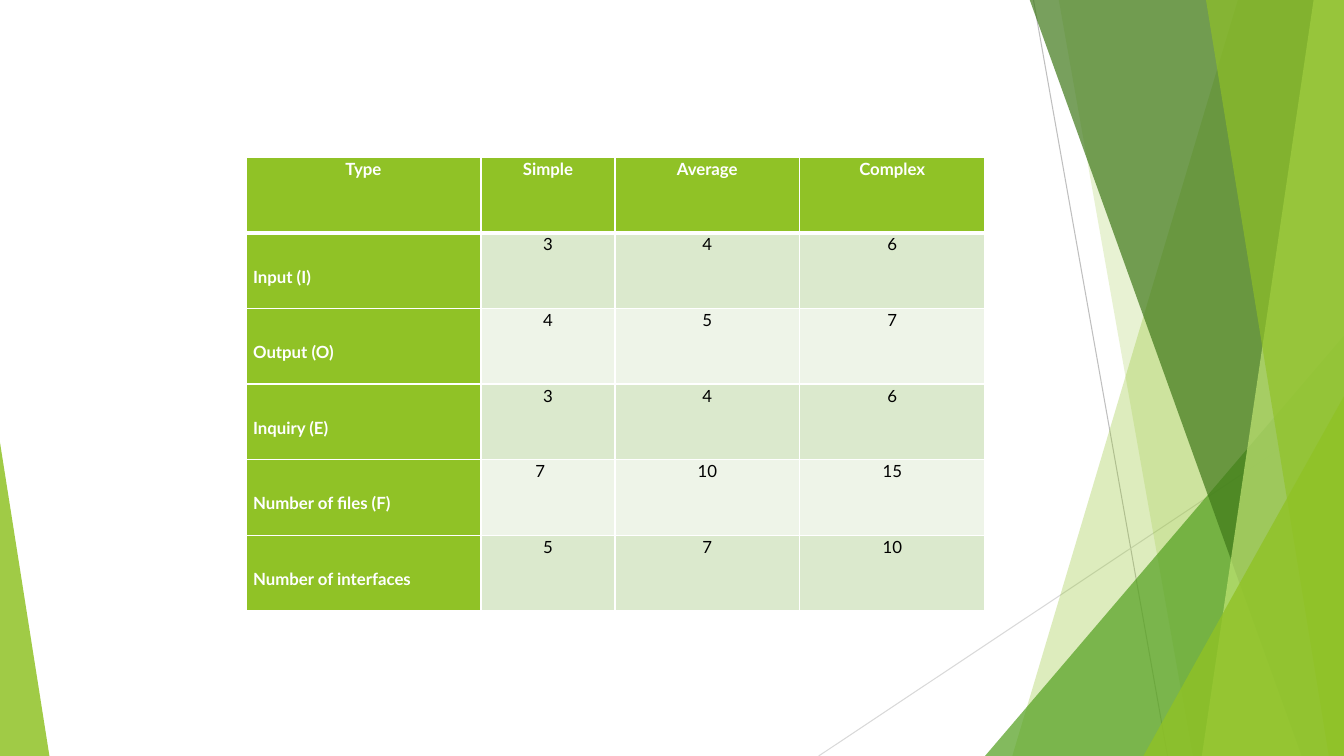
from lxml.etree import SubElement as Sub
from pptx import Presentation
from pptx.dml.color import RGBColor as Rgb
from pptx.enum.shapes import MSO_CONNECTOR as Conn, MSO_SHAPE as Kind
from pptx.enum.text import MSO_ANCHOR as Anchor, PP_ALIGN as Align
from pptx.oxml import parse_xml
from pptx.oxml.ns import nsdecls, qn
from pptx.util import Inches, Pt

WIDE, HIGH = 13.33, 7.5
COLORS = {
    "lime": "90C226", "leaf": "54A021", "forest": "3F7819", "pale": "C0E474",
    "band": "DBE9CD", "light": "EEF4E8", "white": "FFFFFF", "black": "000000",
    "gray": "BFBFBF", "mist": "D9D9D9",
}
FONT = {"name": "Lato", "size": Pt(12)}
PARA = {"line_spacing": 1.07, "space_after": Pt(8)}
CELL = {"margin_left": Inches(0.07), "margin_right": Inches(0.07),
        "margin_top": 0, "margin_bottom": 0, "vertical_anchor": Anchor.TOP}
WIDTHS = [2.33, 1.33, 1.83, 1.84]
ROW = 0.75
ROWS = [
    ["Type", "Simple", "Average", "Complex"],
    ["Input (I)", "3", "4", "6"],
    ["Output (O)", "4", "5", "7"],
    ["Inquiry (E)", "3", "4", "6"],
    ["Number of files (F)", "7", "10", "15"],
    ["Number of interfaces", "5", "7", "10"],
]


def apply(item, values):
    for key, value in values.items():
        setattr(item, key, value)


class Page:
    def __init__(self, slide):
        self.shapes = slide.shapes

    def color(self, name):
        return Rgb.from_string(COLORS[name])

    def line(self, start, end, name):
        line = self.shapes.add_connector(
            Conn.STRAIGHT, *[Inches(n) for n in (*start, *end)])
        line.line.width = Pt(0.75)
        line.line.color.rgb = self.color(name)
        Sub(line._element.spPr, qn("a:effectLst"))

    def paint(self, shape, name, alpha):
        shape.shadow.inherit = False
        shape.fill.solid()
        shape.fill.fore_color.rgb = self.color(name)
        shape.line.fill.background()
        tint = shape._element.spPr.find(qn("a:solidFill"))[0]
        Sub(tint, qn("a:alpha")).set("val", str(alpha * 1000))

    def blade(self, top, base, name, alpha):
        points = [(Inches(x), Inches(y)) for x, y in
                  [(top, -0.01), (WIDE, -0.01), (WIDE, HIGH), (base, HIGH)]]
        build = self.shapes.build_freeform(*points[0])
        build.add_line_segments(points[1:], close=True)
        self.paint(build.convert_to_shape(), name, alpha)

    def wedge(self, left, width, height, peak, name, alpha):
        shape = self.shapes.add_shape(
            Kind.ISOSCELES_TRIANGLE, Inches(left), Inches(HIGH - height),
            Inches(width), Inches(height))
        shape.adjustments[0] = peak
        self.paint(shape, name, alpha)

    def edges(self, cell, widths):
        props = cell._tc.get_or_add_tcPr()
        for spot, (side, width) in enumerate(widths.items()):
            props.insert(spot, parse_xml(
                f'<a:ln{side} {nsdecls("a")} w="{Pt(width)}"><a:solidFill>'
                f'<a:srgbClr val="{COLORS["white"]}"/></a:solidFill></a:ln{side}>'))

    def cell(self, cell, text, fill, ink, bold, align, space, edges):
        apply(cell, CELL | space)
        cell.fill.solid()
        cell.fill.fore_color.rgb = self.color(fill)
        self.edges(cell, edges)
        para = cell.text_frame.paragraphs[0]
        apply(para, PARA | {"alignment": align})
        run = para.add_run()
        run.text = text
        apply(run.font, FONT | {"bold": bold})
        run.font.color.rgb = self.color(ink)

    def table(self, left, top, rows):
        table = self.shapes.add_table(
            len(rows), len(WIDTHS), Inches(left), Inches(top),
            Inches(sum(WIDTHS)), Inches(ROW * len(rows))).table
        for col, width in zip(table.columns, WIDTHS):
            col.width = Inches(width)
        for r, row in enumerate(rows):
            table.rows[r].height = Inches(ROW)
            edges = {"L": 1, "R": 1, "T": 3 if r == 1 else 1, "B": 1 if r else 3}
            for c, text in enumerate(row):
                head = r == 0 or c == 0
                fill = "lime" if head else "band" if r % 2 else "light"
                align, space = Align.CENTER, {}
                if r and c == 0:
                    align, space = Align.JUSTIFY, {"margin_top": Inches(0.32)}
                elif (r, c) == (4, 1):
                    align, space = Align.LEFT, {"margin_left": Inches(0.54)}
                self.cell(table.cell(r, c), text, fill,
                          "white" if head else "black", head, align, space, edges)


def main():
    deck = Presentation()
    apply(deck, {"slide_width": Inches(WIDE), "slide_height": Inches(HIGH)})
    page = Page(deck.slides.add_slide(deck.slide_layouts[6]))
    page.line((10.25, 0), (11.58, HIGH), "gray")
    page.line((WIDE, 4.03), (8.12, HIGH), "mist")
    page.blade(12.28, 10.04, "lime", 30)
    page.blade(10.5, 11.83, "lime", 20)
    page.wedge(9.77, 3.56, 4.17, 1, "leaf", 72)
    page.blade(10.21, 12.91, "forest", 70)
    page.blade(13.03, 11.92, "pale", 70)
    page.blade(11.96, 13.18, "lime", 65)
    page.wedge(11.34, 1.99, 3.57, 1, "lime", 80)
    page.wedge(0, 0.49, 3.11, 0, "lime", 85)
    page.table(2.44, 1.56, ROWS)
    deck.save("out.pptx")


if __name__ == "__main__":
    main()
